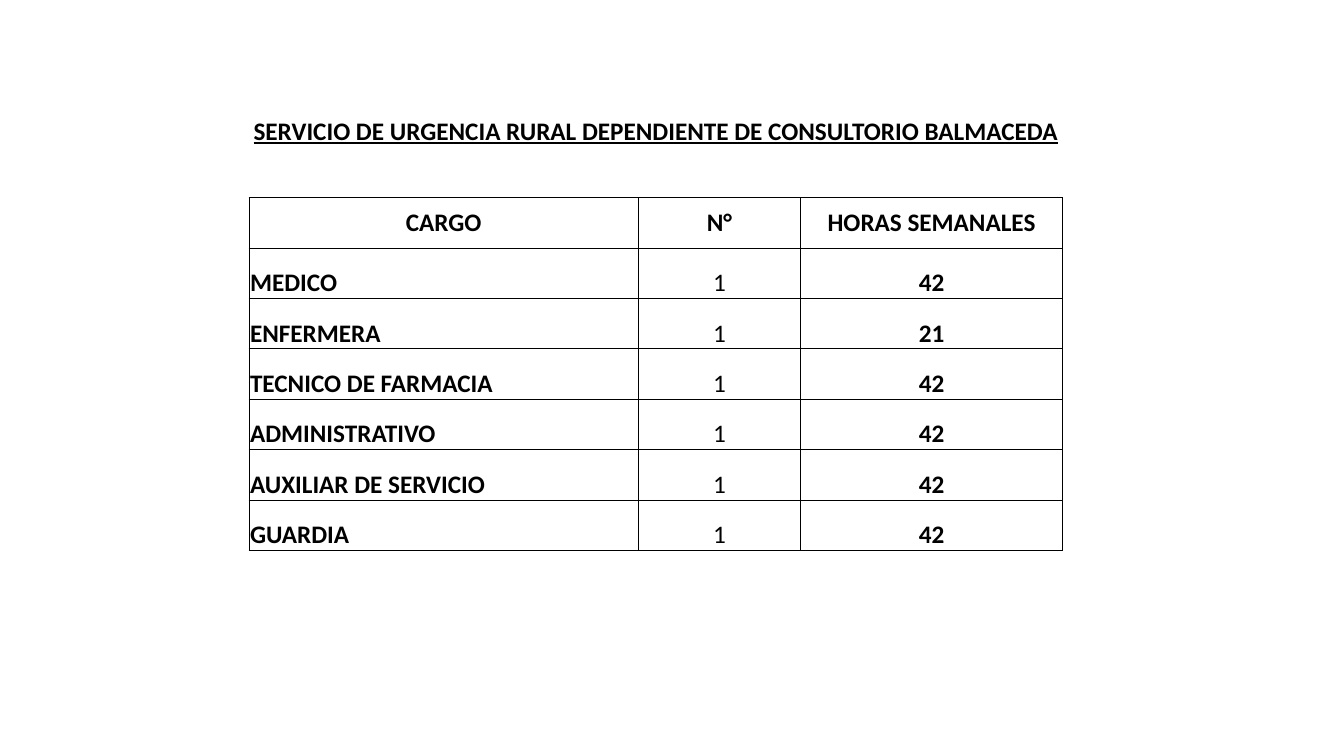
from pptx import Presentation
from pptx.dml.color import RGBColor as RGB
from pptx.enum.text import MSO_ANCHOR as ANCHOR, PP_ALIGN as ALIGN
from pptx.oxml import parse_xml as to_xml
from pptx.oxml.ns import nsdecls
from pptx.util import Inches, Pt

BLACK = RGB(0, 0, 0)
WHITE = RGB(255, 255, 255)
WIDE, HIGH = Inches(13.33), Inches(7.5)
COLS = (3.86, 1.61, 2.6)
ROWS = (0.9,) + (0.5,) * 8
TITLE = "SERVICIO DE URGENCIA RURAL DEPENDIENTE DE CONSULTORIO BALMACEDA"
HEADS = ("CARGO", "N°", "HORAS SEMANALES")
STAFF = (
    ("MEDICO", "1", "42"),
    ("ENFERMERA", "1", "21"),
    ("TECNICO DE FARMACIA", "1", "42"),
    ("ADMINISTRATIVO", "1", "42"),
    ("AUXILIAR DE SERVICIO", "1", "42"),
    ("GUARDIA", "1", "42"),
)


def add_grid(slide):
    """Add the plain white table that holds the title and the staff list."""
    frame = slide.shapes.add_table(
        len(ROWS), len(COLS), Inches(2.47), Inches(0.56),
        Inches(sum(COLS)), Inches(sum(ROWS)))
    grid = frame.table
    grid.first_row = grid.horz_banding = False
    for col, width in zip(grid.columns, COLS):
        col.width = Inches(width)
    for row, height in zip(grid.rows, ROWS):
        row.height = Inches(height)
    for cell in grid.iter_cells():
        cell.fill.solid()
        cell.fill.fore_color.rgb = WHITE
    return grid


def rule(cell, sides="LRTB"):
    """Draw thin black borders on the given sides of a cell."""
    props = cell._tc.get_or_add_tcPr()
    for spot, side in enumerate(sides):
        props.insert(spot, to_xml(
            f'<a:ln{side} {nsdecls("a")} w="{Pt(0.5)}"><a:solidFill>'
            f'<a:srgbClr val="{BLACK}"/></a:solidFill></a:ln{side}>'))


def write(cell, text, align=ALIGN.CENTER, anchor=ANCHOR.BOTTOM, bold=True, line=False):
    """Write one line of text in a cell with tight margins."""
    cell.margin_left = cell.margin_right = cell.margin_top = Inches(0.01)
    cell.margin_bottom = 0
    cell.vertical_anchor = anchor
    para = cell.text_frame.paragraphs[0]
    para.alignment = align
    run = para.add_run()
    run.text = text
    font = run.font
    font.name, font.size = "Calibri", Pt(18)
    font.bold, font.underline = bold, line
    font.color.rgb = BLACK


def main():
    """Build the slide and save it."""
    deck = Presentation()
    deck.slide_width, deck.slide_height = WIDE, HIGH
    slide = deck.slides.add_slide(deck.slide_layouts[6])
    grid = add_grid(slide)
    grid.cell(0, 0).merge(grid.cell(0, len(COLS) - 1))
    write(grid.cell(0, 0), TITLE, line=True)
    for col, head in enumerate(HEADS):
        rule(grid.cell(1, col), "B")
        rule(grid.cell(2, col))
        write(grid.cell(2, col), head, anchor=ANCHOR.MIDDLE)
    for row, staff in enumerate(STAFF, 3):
        for col, text in enumerate(staff):
            rule(grid.cell(row, col))
            align = ALIGN.CENTER if col else ALIGN.LEFT
            write(grid.cell(row, col), text, align, bold=col != 1)
    deck.save("out.pptx")


if __name__ == "__main__":
    main()
